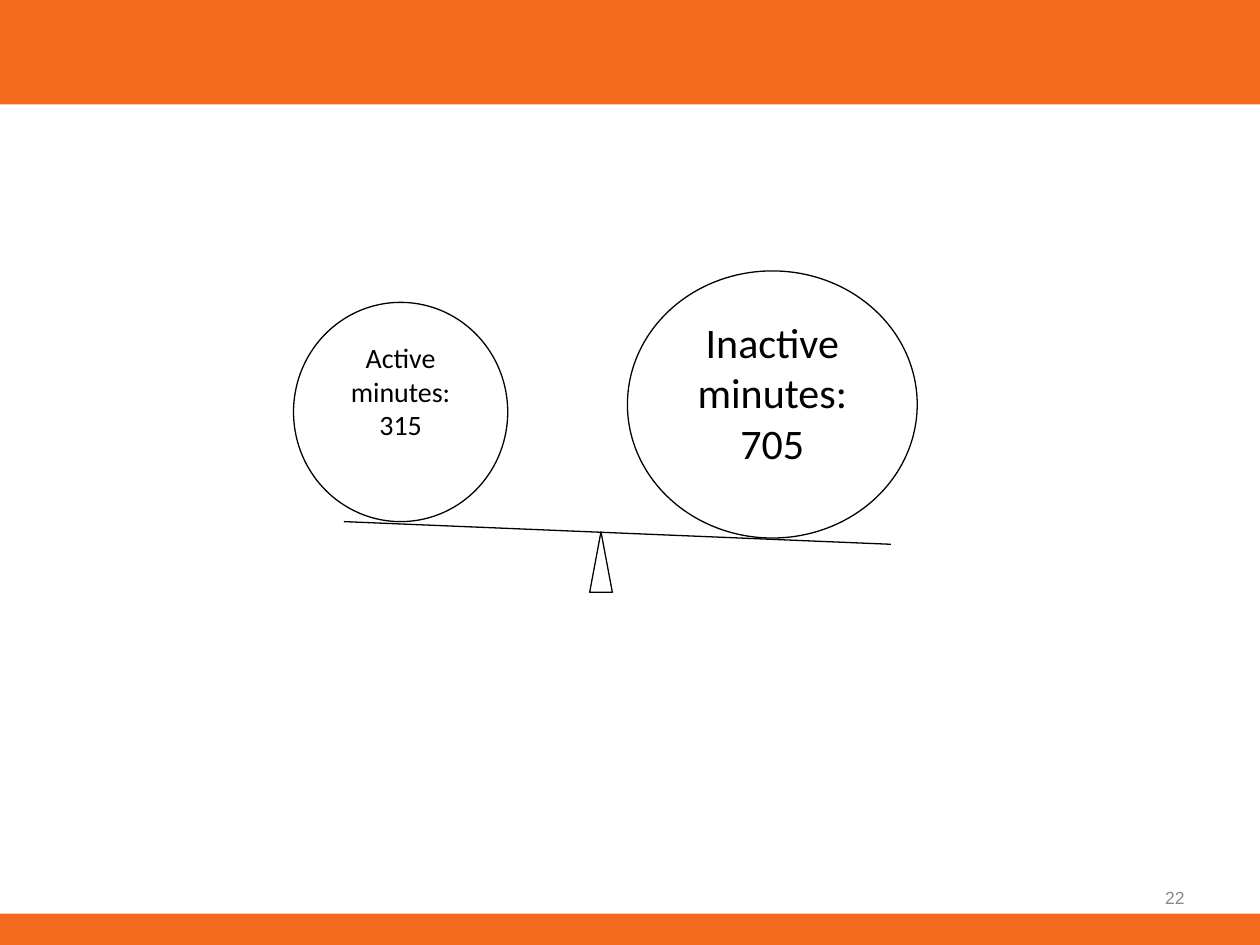
"""Build a slide with a seesaw weighing active against inactive minutes."""
from dataclasses import dataclass

from lxml import etree
from pptx import Presentation
from pptx.dml.color import RGBColor
from pptx.enum.shapes import MSO_CONNECTOR, MSO_SHAPE
from pptx.enum.text import MSO_ANCHOR, PP_ALIGN
from pptx.oxml.ns import qn
from pptx.util import Inches, Pt

RECTANGLE = MSO_SHAPE.RECTANGLE
OVAL = MSO_SHAPE.OVAL
TRIANGLE = MSO_SHAPE.ISOSCELES_TRIANGLE
STRAIGHT = MSO_CONNECTOR.STRAIGHT
TOP, MIDDLE = MSO_ANCHOR.TOP, MSO_ANCHOR.MIDDLE
CENTER, RIGHT = PP_ALIGN.CENTER, PP_ALIGN.RIGHT

ORANGE, WHITE, BLACK, GRAY = "F46A1F", "FFFFFF", "000000", "898989"
SLIDE_WIDTH, SLIDE_HEIGHT = 10, 7.5
HEADER_HEIGHT, FOOTER_HEIGHT = 0.83, 0.25
OUTLINE_WIDTH = 0.75


@dataclass(frozen=True)
class Box:
    left: float
    top: float
    width: float
    height: float

    def lengths(self) -> list:
        return [Inches(value) for value in (self.left, self.top, self.width, self.height)]


@dataclass(frozen=True)
class Weight:
    box: Box
    label: str
    size: float


BANDS = [
    Box(0, 0, SLIDE_WIDTH, HEADER_HEIGHT),
    Box(0, SLIDE_HEIGHT - FOOTER_HEIGHT, SLIDE_WIDTH, FOOTER_HEIGHT),
]
WEIGHTS = [
    Weight(Box(2.33, 2.4, 1.7, 1.74), "Active minutes: 315", 16),
    Weight(Box(4.98, 2.15, 2.3, 2.12), "Inactive minutes: 705", 24),
]
PIVOT = Box(4.68, 4.22, 0.18, 0.48)
PLANK = (2.73, 4.14, 7.07, 4.32)
PAGE_NUMBER = Box(7.17, 6.92, 2.33, 0.4)


def color(value: str) -> RGBColor:
    return RGBColor.from_string(value)


def outline(line) -> None:
    line.color.rgb = color(BLACK)
    line.width = Pt(OUTLINE_WIDTH)


def add_figure(slide, kind, box: Box, fill: str, outlined: bool = True):
    shape = slide.shapes.add_shape(kind, *box.lengths())
    shape.shadow.inherit = False
    shape.fill.solid()
    shape.fill.fore_color.rgb = color(fill)
    if outlined:
        outline(shape.line)
    else:
        shape.line.fill.background()
    return shape


def write_text(shape, text: str, anchor, font_color: str, paragraph_format: dict, font_format: dict) -> None:
    frame = shape.text_frame
    frame.word_wrap = True
    frame.vertical_anchor = anchor
    paragraph = frame.paragraphs[0]
    run = paragraph.add_run()
    run.text = text
    run.font.color.rgb = color(font_color)
    for target, values in ((paragraph, paragraph_format), (run.font, font_format)):
        for name, value in values.items():
            setattr(target, name, value)


def add_plank(slide) -> None:
    connector = slide.shapes.add_connector(STRAIGHT, *[Inches(value) for value in PLANK])
    outline(connector.line)
    etree.SubElement(connector._element.spPr, qn("a:effectLst"))


def add_weight(slide, weight: Weight) -> None:
    shape = add_figure(slide, OVAL, weight.box, WHITE)
    write_text(shape, weight.label, TOP, BLACK,
               {"alignment": CENTER, "space_after": Pt(10)},
               {"name": "Calibri", "size": Pt(weight.size)})


def main() -> None:
    presentation = Presentation()
    presentation.slide_width = Inches(SLIDE_WIDTH)
    presentation.slide_height = Inches(SLIDE_HEIGHT)
    slide = presentation.slides.add_slide(presentation.slide_layouts[6])
    for band in BANDS:
        add_figure(slide, RECTANGLE, band, ORANGE, outlined=False)
    add_plank(slide)
    for weight in WEIGHTS:
        add_weight(slide, weight)
    add_figure(slide, TRIANGLE, PIVOT, WHITE)
    page_number = slide.shapes.add_textbox(*PAGE_NUMBER.lengths())
    write_text(page_number, "22", MIDDLE, GRAY,
               {"alignment": RIGHT}, {"name": "Arial", "size": Pt(10)})
    presentation.save("out.pptx")


if __name__ == "__main__":
    main()
